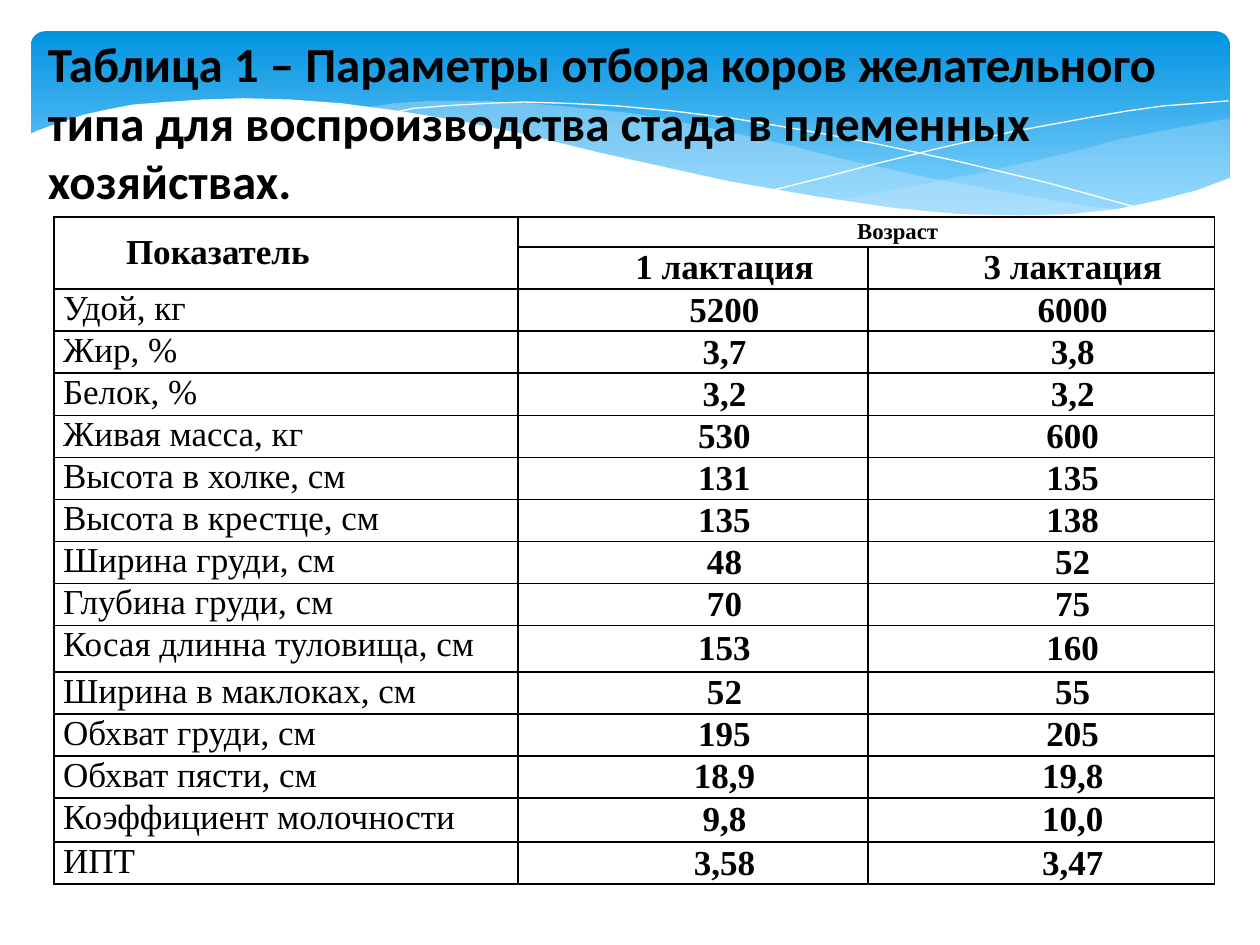
from lxml.etree import SubElement
from pptx import Presentation
from pptx.dml.color import RGBColor
from pptx.enum.shapes import MSO_SHAPE
from pptx.enum.text import MSO_ANCHOR, MSO_AUTO_SIZE, PP_ALIGN
from pptx.oxml import parse_xml
from pptx.oxml.ns import nsdecls, qn
from pptx.util import Cm, Pt

BLACK, WHITE, PALE = "000000", "FFFFFF", "C6E7FC"
WAVE_UNIT = Cm(0.0254)
TITLE = ("Таблица 1 – Параметры отбора коров желательного типа "
         "для воспроизводства стада в племенных хозяйствах.")
ROWS = [
    ("Показатель", "Возраст", ""),
    ("", "1 лактация", "3 лактация"),
    ("Удой, кг", "5200", "6000"),
    ("Жир, %", "3,7", "3,8"),
    ("Белок, %", "3,2", "3,2"),
    ("Живая масса, кг", "530", "600"),
    ("Высота в холке, см", "131", "135"),
    ("Высота в крестце, см", "135", "138"),
    ("Ширина груди, см", "48", "52"),
    ("Глубина груди, см", "70", "75"),
    ("Косая длинна туловища, см", "153", "160"),
    ("Ширина в маклоках, см", "52", "55"),
    ("Обхват груди, см", "195", "205"),
    ("Обхват пясти, см", "18,9", "19,8"),
    ("Коэффициент молочности", "9,8", "10,0"),
    ("ИПТ", "3,58", "3,47"),
]
COLUMN_WIDTHS = (9.35, 7.06, 6.98)
ROW_HEIGHT = 0.76
SPECIAL_HEIGHTS = {0: 0.61, 10: 0.93, 11: 0.79, 14: 0.89}

RIGHT_WAVE = [
    (976, 94), (948, 99), (921, 104), (891, 110), (861, 118), (832, 125),
    (779, 137), (729, 147), (661, 160), (691, 164), (719, 167), (745, 169),
    (769, 171), (803, 172), (835, 172), (863, 170), (889, 166), (913, 162),
    (935, 156), (949, 152), (963, 147), (976, 141)]
MIDDLE_WAVE = [
    (893, 167), (866, 164), (807, 154), (741, 142), (668, 126), (629, 116),
    (584, 106), (541, 97), (502, 90), (465, 86), (420, 82), (380, 80),
    (344, 80), (313, 82), (286, 86), (323, 90), (362, 97), (404, 106),
    (449, 116), (530, 135), (584, 146), (634, 156), (680, 163), (722, 168),
    (761, 171), (796, 173), (828, 173), (857, 171)]
FALLING_LINE = [
    (309, 90), (328, 86), (353, 84), (387, 82), (416, 81), (450, 82),
    (489, 84), (533, 88), (582, 94), (636, 103), (695, 114), (760, 128),
    (831, 145), (907, 166)]
RISING_LINE = [
    (613, 151), (653, 141), (695, 130), (748, 117), (806, 104), (866, 93),
    (895, 88), (924, 84), (951, 82), (975, 80)]
WHITE_WAVE = [
    (977, 141), (950, 151), (920, 159), (887, 166), (850, 170), (809, 171),
    (761, 170), (708, 165), (648, 156), (579, 144), (529, 133), (475, 121),
    (418, 107), (365, 96), (316, 88), (271, 82), (230, 79), (193, 78),
    (161, 79), (132, 81), (106, 83), (85, 87), (67, 91), (52, 96),
    (40, 100), (29, 104), (23, 107), (23, 224), (977, 224)]


def color(value):
    """Turn a hex string into a colour."""
    return RGBColor.from_string(value)


def add_panel(slide):
    """Add the rounded gradient panel behind the title."""
    panel = slide.shapes.add_shape(
        MSO_SHAPE.ROUNDED_RECTANGLE, Cm(0.63), Cm(0.63), Cm(24.16), Cm(3.96))
    panel.adjustments[0] = 0.07
    panel.shadow.inherit = False
    panel.line.fill.background()
    panel.fill.gradient()
    panel.fill.gradient_angle = 270
    stops = zip(panel.fill.gradient_stops, ("0293E0", "83D3FE"), (0, 0.9))
    for stop, value, position in stops:
        stop.color.rgb = color(value)
        stop.position = position


def add_curve(slide, points, closed):
    """Draw a path through points given in wave units."""
    builder = slide.shapes.build_freeform(*points[0], scale=WAVE_UNIT)
    builder.add_line_segments(points[1:], close=closed)
    curve = builder.convert_to_shape()
    curve.shadow.inherit = False
    return curve


def add_wave(slide, points, fill, opacity=100):
    """Add a filled wave without an outline."""
    wave = add_curve(slide, points, True)
    wave.line.fill.background()
    wave.fill.solid()
    wave.fill.fore_color.rgb = color(fill)
    if opacity < 100:
        tint = wave._element.spPr.find(qn("a:solidFill"))[0]
        SubElement(tint, qn("a:alpha"), val=str(opacity * 1000))


def add_hairline(slide, points):
    """Add a thin white curve."""
    hairline = add_curve(slide, points, False)
    hairline.fill.background()
    hairline.line.color.rgb = color(WHITE)
    hairline.line.width = Pt(0)


def write_text(frame, text, font="Times New Roman", size=20, bold=True,
               align=PP_ALIGN.LEFT, indent=0):
    """Write one formatted paragraph into a text frame."""
    para = frame.paragraphs[0]
    para.alignment = align
    para._p.get_or_add_pPr().set("marL", str(Cm(indent)))
    span = para.add_run()
    span.text = text
    span.font.name = font
    span.font.size = Pt(size)
    span.font.bold = bold
    span.font.color.rgb = color(BLACK)


def place_title(slide):
    """Move the title in front of the waves and fill it in."""
    title = slide.shapes.title
    slide.shapes._spTree.append(title._element)
    title.left, title.top = Cm(0.71), Cm(0.53)
    title.width, title.height = Cm(23.39), Cm(3.84)
    title.text_frame.word_wrap = True
    title.text_frame.auto_size = MSO_AUTO_SIZE.SHAPE_TO_FIT_TEXT
    title.text_frame.vertical_anchor = MSO_ANCHOR.MIDDLE
    write_text(title.text_frame, TITLE, font="Calibri", size=28)


def style_cell(cell, anchor):
    """Set the margins, anchor, empty fill and black borders of a cell."""
    cell.margin_left = cell.margin_right = Cm(0.18)
    cell.margin_top = cell.margin_bottom = Cm(0)
    cell.vertical_anchor = anchor
    cell.fill.background()
    properties = cell._tc.get_or_add_tcPr()
    for index, side in enumerate(("lnL", "lnR", "lnT", "lnB")):
        properties.insert(index, parse_xml(
            f'<a:{side} {nsdecls("a")} w="{Pt(1)}"><a:solidFill>'
            f'<a:srgbClr val="{BLACK}"/></a:solidFill></a:{side}>'))


def add_parameter_table(slide):
    """Add the table of selection parameters."""
    table = slide.shapes.add_table(
        len(ROWS), len(COLUMN_WIDTHS), Cm(1.09), Cm(4.37),
        Cm(sum(COLUMN_WIDTHS)), Cm(12.5)).table
    table.first_row = table.horz_banding = False
    for column, width in zip(table.columns, COLUMN_WIDTHS):
        column.width = Cm(width)
    table.cell(0, 0).merge(table.cell(1, 0))
    table.cell(0, 1).merge(table.cell(0, 2))
    for row, texts in enumerate(ROWS):
        table.rows[row].height = Cm(SPECIAL_HEIGHTS.get(row, ROW_HEIGHT))
        for column, text in enumerate(texts):
            cell = table.cell(row, column)
            label = column == 0 and row > 1
            style_cell(cell, MSO_ANCHOR.TOP if label else MSO_ANCHOR.MIDDLE)
            if not text:
                continue
            if label:
                write_text(cell.text_frame, text, bold=False,
                           align=PP_ALIGN.JUSTIFY)
            else:
                write_text(cell.text_frame, text, indent=1.27,
                           size=13 if text == "Возраст" else 20,
                           align=PP_ALIGN.CENTER if column else PP_ALIGN.LEFT)


def main():
    """Build and save the slide."""
    deck = Presentation()
    deck.slide_width, deck.slide_height = Cm(25.4), Cm(19.05)
    slide = deck.slides.add_slide(deck.slide_layouts[5])
    add_panel(slide)
    add_wave(slide, RIGHT_WAVE, PALE, opacity=29)
    add_wave(slide, MIDDLE_WAVE, PALE, opacity=40)
    add_hairline(slide, FALLING_LINE)
    add_hairline(slide, RISING_LINE)
    add_wave(slide, WHITE_WAVE, WHITE)
    place_title(slide)
    add_parameter_table(slide)
    deck.save("out.pptx")


if __name__ == "__main__":
    main()
